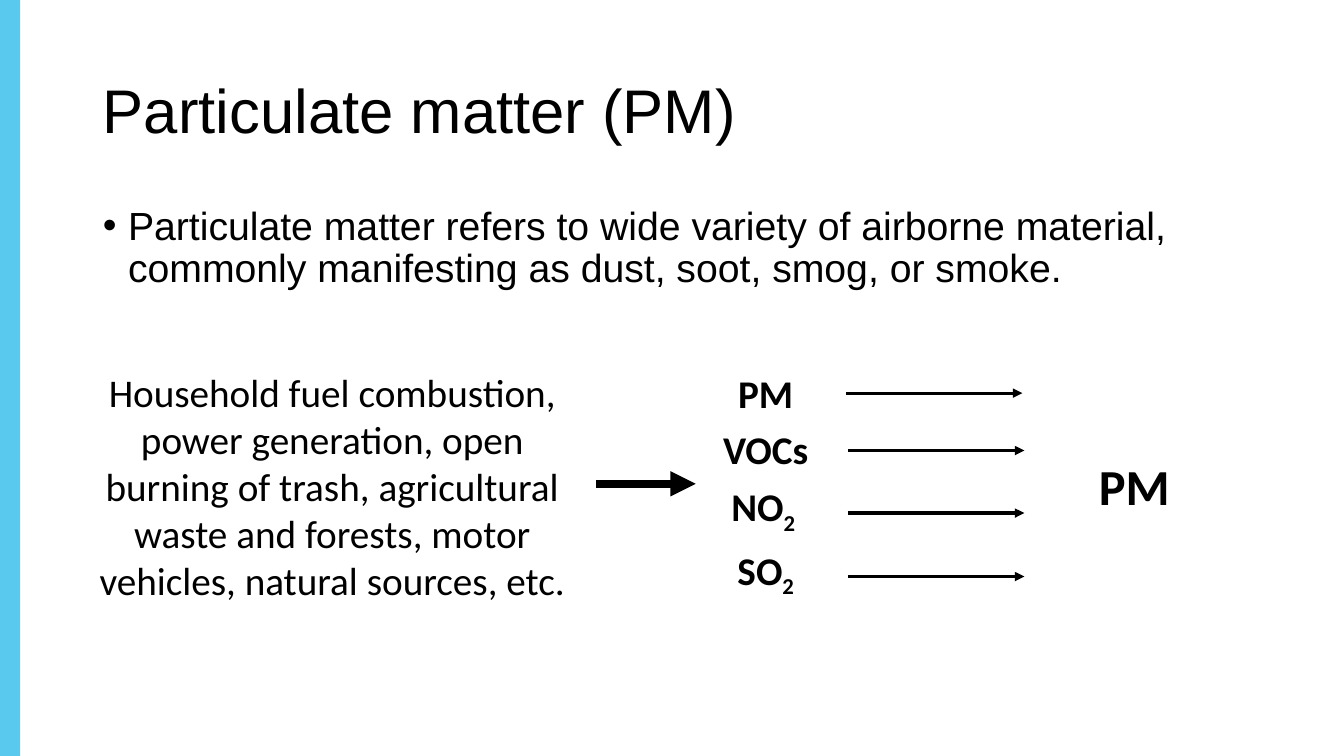
from lxml.etree import SubElement
from pptx import Presentation
from pptx.dml.color import RGBColor
from pptx.enum.shapes import MSO_CONNECTOR, MSO_SHAPE
from pptx.enum.text import MSO_ANCHOR, MSO_AUTO_SIZE, PP_ALIGN
from pptx.oxml.ns import qn
from pptx.util import Pt

PX = 9144
BLACK = RGBColor(0x00, 0x00, 0x00)
SKY = RGBColor(0x59, 0xCA, 0xED)
CAUSES = ("Household fuel combustion, power generation, open burning of trash, "
          "agricultural waste and forests, motor vehicles, natural sources, etc.")
GASES = [("PM", ""), ("VOCs", ""), ("NO", "2 "), ("SO", "2")]
ARROWS = [(839, 390), (841, 447), (841, 509), (841, 572)]


def scale(*sizes):
    return [size * PX for size in sizes]


def style(run, face, size, bold=False):
    font = run.font
    font.name, font.size, font.bold = face, Pt(size), bold
    font.color.rgb = BLACK


def fill_holder(holder, box, text, size, anchor):
    holder.left, holder.top, holder.width, holder.height = scale(*box)
    frame = holder.text_frame
    frame.text = text
    frame.auto_size = MSO_AUTO_SIZE.NONE
    frame.vertical_anchor = anchor
    para = frame.paragraphs[0]
    para.alignment = PP_ALIGN.LEFT
    para.line_spacing = 0.9
    para.space_before = Pt(0)
    style(para.runs[0], "Arial", size)
    return para


def add_bullet(para):
    props = para._p.get_or_add_pPr()
    props.set("marL", str(25 * PX))
    props.set("indent", str(-25 * PX))
    SubElement(props, qn("a:buChar")).set("char", "•")


def add_label(slide, box, lines, size, align, bold):
    frame = slide.shapes.add_textbox(*scale(*box)).text_frame
    frame.word_wrap = True
    for index, (base, sub) in enumerate(lines):
        para = frame.add_paragraph() if index else frame.paragraphs[0]
        para.text = base
        para.alignment = align
        para.space_before = Pt(7 if index else 0)
        if sub:
            run = para.add_run()
            run.text = sub
            run._r.get_or_add_rPr().set("baseline", "-25000")
        for run in para.runs:
            style(run, "Calibri", size, bold)


def add_arrow(shapes, left, top, width, weight):
    arrow = shapes.add_connector(
        MSO_CONNECTOR.STRAIGHT, *scale(left, top, left + width, top))
    arrow.line.color.rgb = BLACK
    arrow.line.width = Pt(weight)
    SubElement(arrow.line._get_or_add_ln(), qn("a:tailEnd")).set("type", "triangle")
    SubElement(arrow._element.spPr, qn("a:effectLst"))


def add_band(slide):
    band = slide.shapes.add_shape(MSO_SHAPE.RECTANGLE, *scale(0, 0, 20, 750))
    band.shadow.inherit = False
    band.fill.solid()
    band.fill.fore_color.rgb = SKY
    band.line.fill.background()


def main():
    deck = Presentation()
    deck.slide_width, deck.slide_height = scale(1333, 750)
    slide = deck.slides.add_slide(deck.slide_layouts[1])
    add_band(slide)
    fill_holder(slide.shapes.title, (92, 40, 1150, 145),
                "Particulate matter (PM)", 44, MSO_ANCHOR.MIDDLE)
    point = fill_holder(
        slide.placeholders[1], (92, 200, 1179, 110),
        "Particulate matter refers to wide variety of airborne material, "
        "commonly manifesting as dust, soot, smog, or smoke.", 28, MSO_ANCHOR.TOP)
    add_bullet(point)
    add_label(slide, (1080, 447, 100, 71), [("PM", "")], 36, PP_ALIGN.LEFT, True)
    add_label(slide, (676, 361, 167, 234), GASES, 28, PP_ALIGN.CENTER, True)
    add_label(slide, (71, 360, 517, 246), [(CAUSES, "")], 28, PP_ALIGN.CENTER, False)
    group = slide.shapes.add_group_shape()
    for left, top in ARROWS:
        add_arrow(group.shapes, left, top, 175, 2.25)
    add_arrow(slide.shapes, 591, 480, 99, 6)
    deck.save("out.pptx")


if __name__ == "__main__":
    main()
